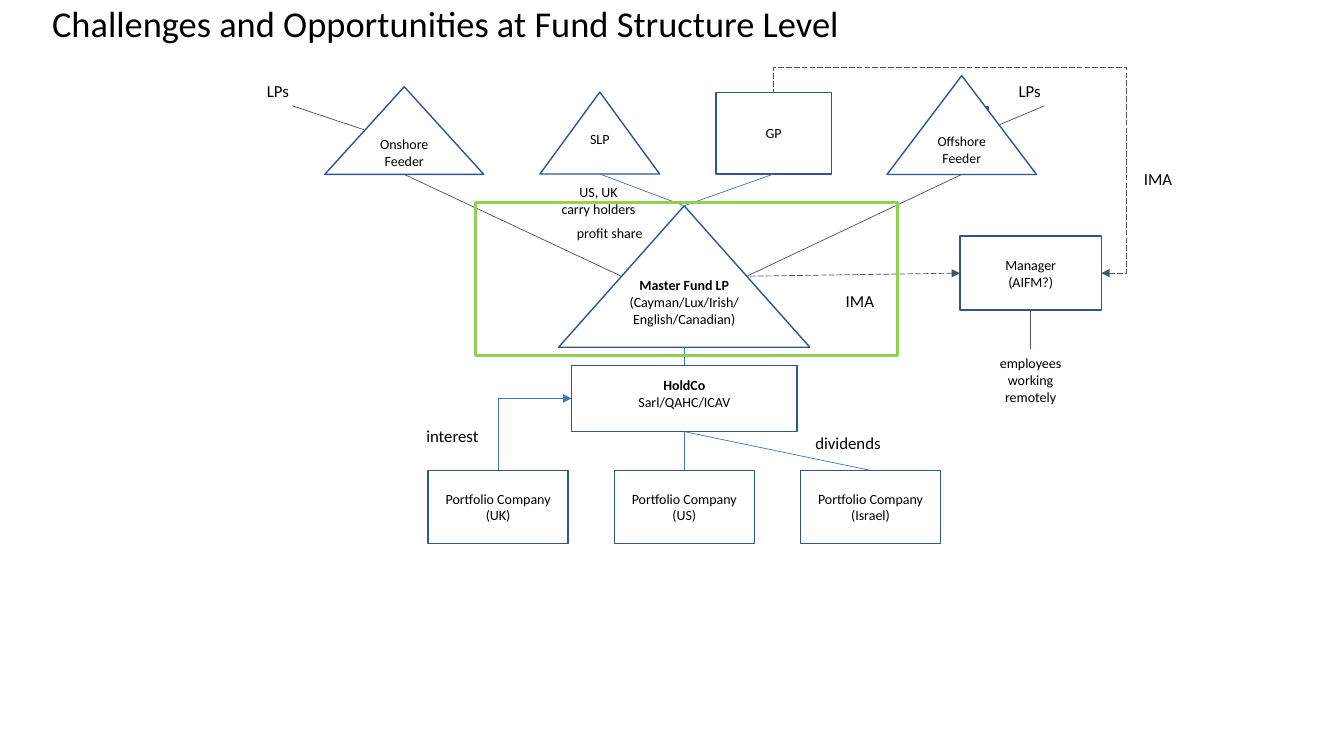
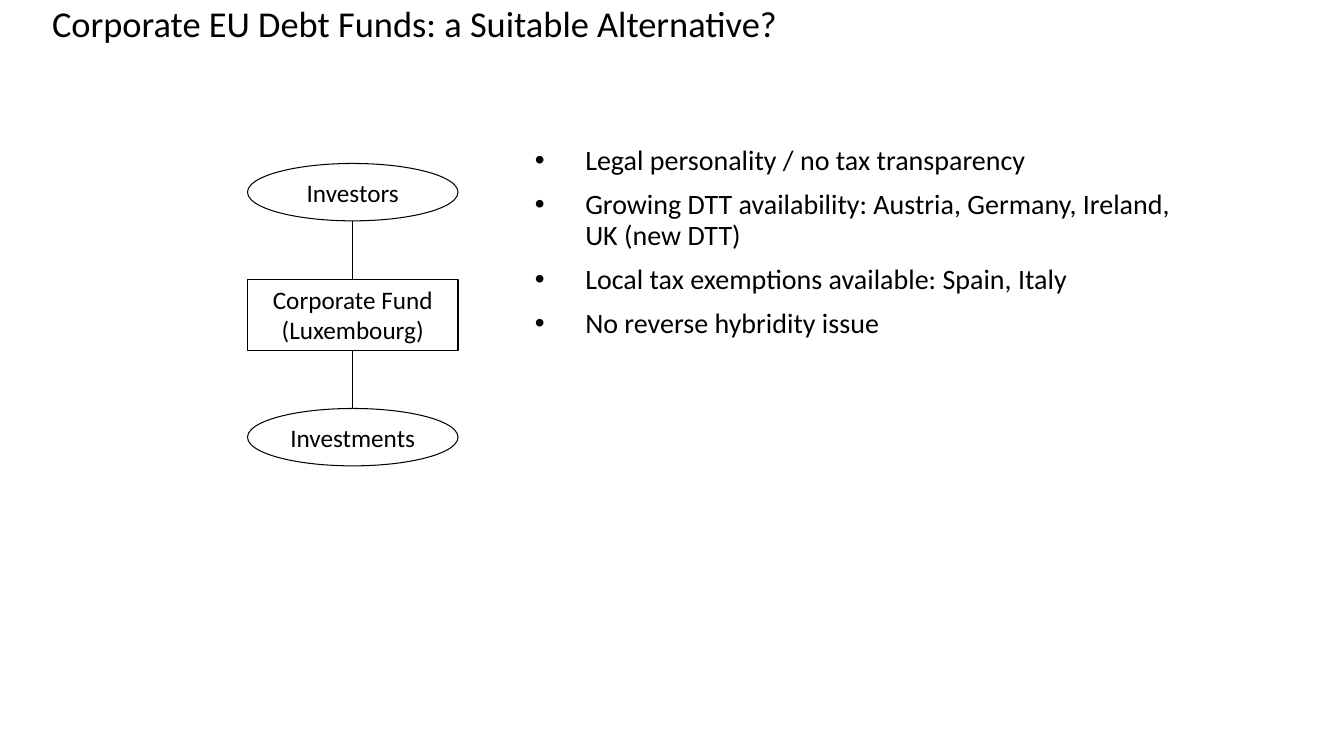
from dataclasses import dataclass, field
from typing import Any

from lxml.etree import SubElement
from pptx import Presentation
from pptx.dml.color import RGBColor
from pptx.enum.dml import MSO_LINE
from pptx.enum.shapes import MSO_CONNECTOR, MSO_SHAPE
from pptx.enum.text import MSO_ANCHOR, MSO_AUTO_SIZE, PP_ALIGN
from pptx.oxml.ns import qn
from pptx.util import Pt

FONT = "Calibri"
BLACK, WHITE = "000000", "FFFFFF"
NAVY, SLATE, BLUE, GREEN = "325491", "44546A", "4472C4", "92D050"
INSETS = (7.2, 3.6, 7.2, 3.6)
RECT, TRIANGLE, OVAL = MSO_SHAPE.RECTANGLE, MSO_SHAPE.ISOSCELES_TRIANGLE, MSO_SHAPE.OVAL

Box = tuple[float, float, float, float]
Point = tuple[float, float]


@dataclass
class Entity:
    outline: MSO_SHAPE
    box: Box
    text: str = ""
    style: dict[str, Any] = field(default_factory=dict)
    fill: str | None = WHITE
    line: str = NAVY
    weight: float = 1


@dataclass
class Label:
    text: str
    box: Box
    size: float = 12
    align: PP_ALIGN = PP_ALIGN.LEFT


@dataclass
class Link:
    start: Point
    end: Point
    color: str = SLATE
    dashed: bool = False
    arrow: bool = False


@dataclass
class Elbow:
    link: Link
    preset: str
    start_entity: str
    start_site: int
    end_entity: str
    end_site: int
    bends: tuple[int, ...] = ()


def rgb(value: str) -> RGBColor:
    return RGBColor.from_string(value)


def write(frame, text: str, *, size: float, align=PP_ALIGN.CENTER, anchor=MSO_ANCHOR.MIDDLE,
          insets: Box = INSETS, bold_first: bool = False, spacing: float | None = None,
          before: float = 0, bullet: str = "", indent: float = 0) -> None:
    frame.word_wrap = True
    frame.auto_size = MSO_AUTO_SIZE.NONE
    frame.vertical_anchor = anchor
    frame.margin_left, frame.margin_top, frame.margin_right, frame.margin_bottom = map(Pt, insets)
    for index, content in enumerate(text.split("\r")):
        paragraph = frame.add_paragraph() if index else frame.paragraphs[0]
        paragraph.text = content
        paragraph.alignment = align
        if spacing:
            paragraph.line_spacing = spacing
        paragraph.space_before = Pt(before if index else 0)
        if bullet:
            properties = paragraph._p.get_or_add_pPr()
            properties.set("marL", str(Pt(indent)))
            properties.set("indent", str(-Pt(indent)))
            SubElement(properties, qn("a:buFont")).set("typeface", "Arial")
            SubElement(properties, qn("a:buChar")).set("char", bullet)
        for position, run in enumerate(paragraph.runs):
            run.font.name = FONT
            run.font.size = Pt(size)
            run.font.bold = bold_first and position == 0
            run.font.color.rgb = rgb(BLACK)


def add_titled_slide(deck, title: str):
    slide = deck.slides.add_slide(deck.slide_layouts[5])
    heading = slide.shapes.title
    heading.left, heading.top, heading.width, heading.height = map(Pt, (30, 1, 900, 36))
    write(heading.text_frame, title, size=26, align=PP_ALIGN.LEFT,
          anchor=MSO_ANCHOR.TOP, spacing=0.9)
    return slide


def draw_entity(slide, entity: Entity):
    shape = slide.shapes.add_shape(entity.outline, *map(Pt, entity.box))
    shape.shadow.inherit = False
    if entity.fill:
        shape.fill.solid()
        shape.fill.fore_color.rgb = rgb(entity.fill)
    else:
        shape.fill.background()
    shape.line.color.rgb = rgb(entity.line)
    shape.line.width = Pt(entity.weight)
    if entity.text:
        write(shape.text_frame, entity.text, **{"size": 10, **entity.style})
    return shape


def draw_label(slide, label: Label) -> None:
    caption = slide.shapes.add_textbox(*map(Pt, label.box))
    write(caption.text_frame, label.text, size=label.size, align=label.align,
          anchor=MSO_ANCHOR.TOP)


def draw_link(slide, link: Link, kind=MSO_CONNECTOR.STRAIGHT):
    connector = slide.shapes.add_connector(kind, *map(Pt, link.start + link.end))
    connector.line.color.rgb = rgb(link.color)
    connector.line.width = Pt(0.5)
    if link.dashed:
        connector.line.dash_style = MSO_LINE.LONG_DASH
    properties = connector.element.spPr
    if link.arrow:
        SubElement(properties.find(qn("a:ln")), qn("a:headEnd")).set("type", "triangle")
    SubElement(properties, qn("a:effectLst"))
    return connector


def draw_elbow(slide, elbow: Elbow, entities: dict) -> None:
    connector = draw_link(slide, elbow.link, MSO_CONNECTOR.ELBOW)
    connector.begin_connect(entities[elbow.start_entity], elbow.start_site)
    connector.end_connect(entities[elbow.end_entity], elbow.end_site)
    geometry = connector.element.spPr.find(qn("a:prstGeom"))
    geometry.set("prst", elbow.preset)
    guides = geometry.find(qn("a:avLst"))
    for number, bend in enumerate(elbow.bends, 1):
        guide = SubElement(guides, qn("a:gd"))
        guide.set("name", f"adj{number}")
        guide.set("fmla", f"val {bend}")


def build_fund_structure(deck) -> None:
    slide = add_titled_slide(deck, "Challenges and Opportunities at Fund Structure Level")
    top = MSO_ANCHOR.TOP
    structure = {
        "backing": Entity(RECT, (672, 76.3, 33.8, 46)),
        "onshore": Entity(TRIANGLE, (232, 62, 113.6, 62.6), "Onshore Feeder"),
        "master": Entity(TRIANGLE, (399, 147, 179.4, 101),
                         "Master Fund LP\n(Cayman/Lux/Irish/ English/Canadian)",
                         {"anchor": top, "insets": (0, 0, 0, 14.4), "bold_first": True}),
        "gp": Entity(RECT, (511.4, 66.3, 82.4, 58), "GP"),
        "slp": Entity(TRIANGLE, (385.7, 65.8, 85.5, 58.5), "SLP", {"insets": (7.2, 0, 7.2, 21)}),
        "offshore": Entity(TRIANGLE, (633.6, 54, 106.8, 70.6), "Offshore Feeder", {"size": 9.8}),
        "holdco": Entity(RECT, (408.2, 261, 161.2, 47.3), "HoldCo\nSarl/QAHC/ICAV",
                         {"insets": (7.2, 0, 7.2, 7.6), "bold_first": True}),
        "manager": Entity(RECT, (685.7, 168.6, 101, 53), "Manager\n(AIFM?)",
                          {"anchor": top, "insets": (7.2, 14.4, 7.2, 14.4)}),
    }
    for column, country in enumerate(("UK", "US", "Israel")):
        structure[country] = Entity(RECT, (305.8 + 133 * column, 336, 100, 52.2),
                                    f"Portfolio Company\n({country})")
    drawn = {name: draw_entity(slide, entity) for name, entity in structure.items()}

    apex, holdco_base = (488.7, 147), (488.7, 308.3)
    master_left, master_right = (443.8, 197.3), (533.5, 197.3)
    for link in (
        Link((713.5, 89.3), (746, 75.6)),
        Link(master_right, (687, 124.6)),
        Link(master_left, (288.8, 124.6)),
        Link((736.2, 221.6), (736.2, 249.5)),
        Link((208.8, 75.6), (260.6, 92.9)),
        Link((685.7, 195.1), master_right, dashed=True, arrow=True),
        Link((552.6, 124.3), apex, BLUE),
        Link((428.5, 124.3), apex, BLUE),
        Link((488.7, 248), (488.7, 261), BLUE),
        Link(holdco_base, (488.7, 336), BLUE),
        Link(holdco_base, (621.8, 336), BLUE),
    ):
        draw_link(slide, link)

    for elbow in (
        Elbow(Link((408.2, 284.6), (355.8, 336), BLUE, arrow=True),
              "bentConnector2", "holdco", 1, "UK", 0),
        Elbow(Link((786.7, 195.1), (552.6, 66.3), dashed=True, arrow=True),
              "bentConnector4", "manager", 3, "gp", 0, (-7700, 114000)),
    ):
        draw_elbow(slide, elbow, drawn)

    centered = PP_ALIGN.CENTER
    for label in (
        Label("LPs", (183.6, 54, 51, 21.6)),
        Label("LPs", (720.5, 54, 51, 21.6)),
        Label("IMA", (597, 204, 51, 21.6)),
        Label("IMA", (810, 116.8, 51, 21.6)),
        Label("interest", (297.4, 300.4, 66, 21.6)),
        Label("dividends", (575.3, 305.8, 83, 21.6)),
        Label("US, UK\ncarry holders", (380, 127.4, 95, 31.7), 10, centered),
        Label("profit share", (386.5, 157, 98, 19.4), 10, centered),
        Label("employees working remotely", (693.6, 249.8, 85, 44), 10, centered),
    ):
        draw_label(slide, label)
    draw_entity(slide, Entity(RECT, (339.8, 144.7, 301, 109.4), fill=None,
                              line=GREEN, weight=2.25))


def build_debt_funds(deck) -> None:
    slide = add_titled_slide(deck, "Corporate EU Debt Funds: a Suitable Alternative?")
    benefits = slide.shapes.add_textbox(*map(Pt, (375, 101, 484, 244)))
    write(benefits.text_frame, "\r".join((
        "Legal personality / no tax transparency",
        "Growing DTT availability: Austria, Germany, Ireland, UK (new DTT)",
        "Local tax exemptions available: Spain, Italy",
        "No reverse hybridity issue",
    )), size=20, align=PP_ALIGN.LEFT, anchor=MSO_ANCHOR.TOP, spacing=0.9,
        before=10, bullet="•", indent=36)

    left, width, gap = 176.8, 150.4, 41.5
    center, level = left + width / 2, 116.8
    for tier, (outline, height, text) in enumerate((
        (OVAL, 41, "Investors"),
        (RECT, 51, "Corporate Fund\r(Luxembourg)"),
        (OVAL, 41, "Investments"),
    )):
        if tier:
            draw_link(slide, Link((center, level), (center, level + gap), BLACK))
            level += gap
        draw_entity(slide, Entity(outline, (left, level, width, height), text,
                                  {"size": 18}, None, BLACK, 0.75))
        level += height


def main() -> None:
    deck = Presentation()
    deck.slide_width, deck.slide_height = Pt(960), Pt(540)
    build_fund_structure(deck)
    build_debt_funds(deck)
    deck.save("out.pptx")


if __name__ == "__main__":
    main()
